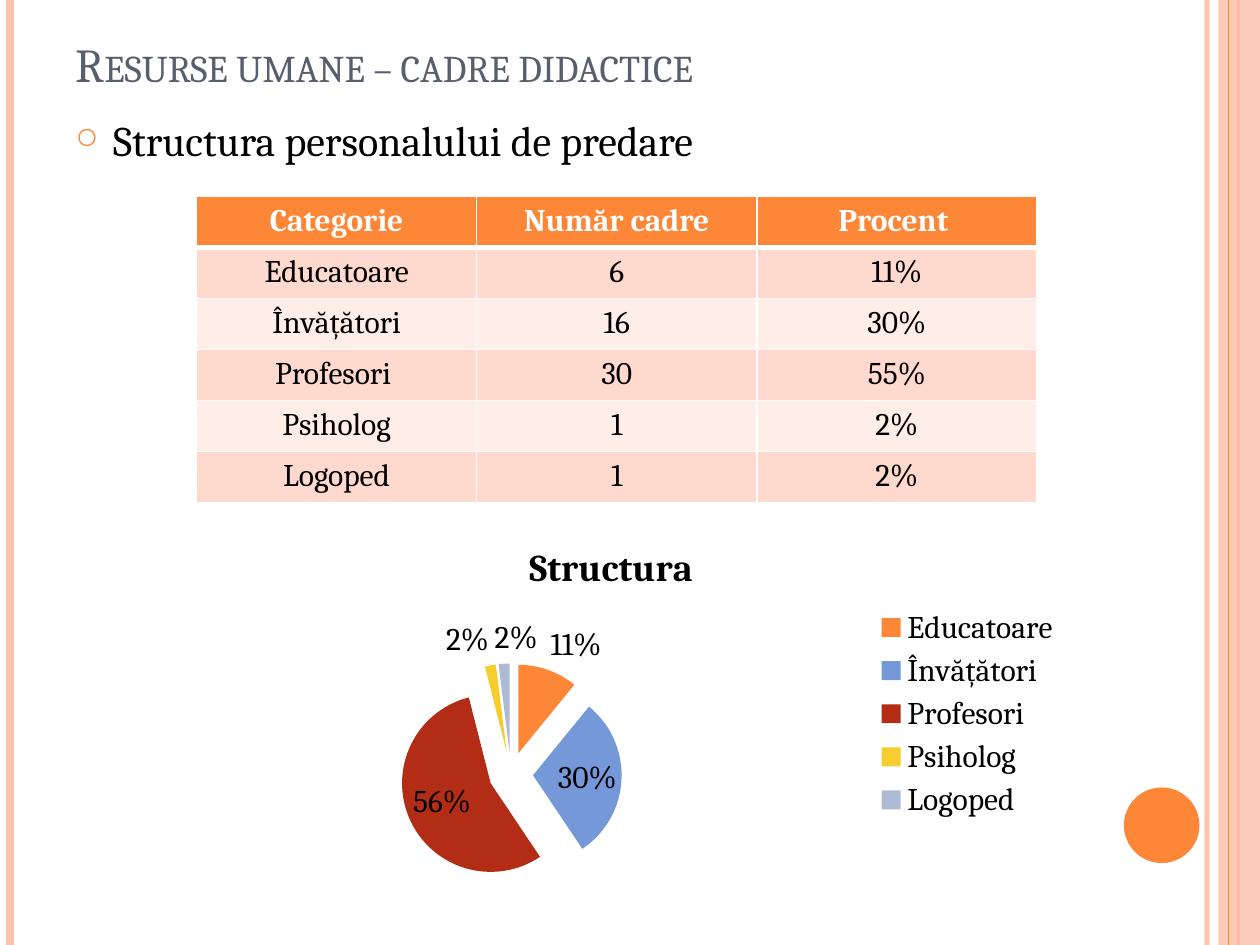
from lxml import etree
from pptx import Presentation
from pptx.chart.data import CategoryChartData
from pptx.dml.color import RGBColor
from pptx.enum import chart as charts, shapes, text
from pptx.oxml.ns import qn
from pptx.util import Inches, Pt

FONT = "Cambria"
ORANGE, PEACH, WHITE, BLACK = "FE8637", "FEC3AE", "FFFFFF", "000000"
BANDS = ("FFD9CE", "FFEDE8")
SLICES = (ORANGE, "7598D9", "B32C16", "F5CD2D", "AEBAD5")
HEADER = ("Categorie", "Număr cadre", "Procent ")
STAFF = (
    ("Educatoare", "6", "11%"),
    ("Învățători", "16", "30%"),
    ("Profesori ", "30", "55%"),
    ("Psiholog", "1", "2%"),
    ("Logoped", "1", "2%"),
)
SHARES = (11, 30, 56, 2, 2)


def color(value):
    return RGBColor.from_string(value)


def add_xml(parent, tag, **attributes):
    return etree.SubElement(parent, qn(tag), attributes)


def set_alpha(properties, percent):
    """Make the solid colours below an element partly transparent."""
    for item in properties.iter(qn("a:srgbClr")):
        add_xml(item, "a:alpha", val=str(percent * 1000))


def format_font(font, size, fill=BLACK, bold=False):
    font.name, font.size, font.bold = FONT, Pt(size), bold
    font.color.rgb = color(fill)


def write_text(frame, content, size, fill=BLACK, bold=False, align=None, small_caps=False):
    paragraph = frame.paragraphs[0]
    paragraph.alignment = align
    run = paragraph.add_run()
    run.text = content
    format_font(run.font, size, fill, bold)
    if small_caps:
        run._r.get_or_add_rPr().set("cap", "small")
    return paragraph


def add_text_box(slide, left, top, width, height, content, size,
                 anchor=text.MSO_ANCHOR.TOP, **style):
    box = slide.shapes.add_textbox(Inches(left), Inches(top), Inches(width), Inches(height))
    box.text_frame.word_wrap = True
    box.text_frame.vertical_anchor = anchor
    return write_text(box.text_frame, content, size, **style)


def add_shape(slide, kind, left, top, width, height, fill, alpha=100):
    shape = slide.shapes.add_shape(kind, Inches(left), Inches(top), Inches(width), Inches(height))
    shape.shadow.inherit = False
    shape.fill.solid()
    shape.fill.fore_color.rgb = color(fill)
    shape.line.fill.background()
    if alpha < 100:
        set_alpha(shape._element.spPr, alpha)


def add_vertical_line(slide, x, height, fill, width, alpha=100):
    line = slide.shapes.add_connector(
        shapes.MSO_CONNECTOR.STRAIGHT, Inches(x), 0, Inches(x), Inches(height))
    line.line.color.rgb = color(fill)
    line.line.width = Pt(width)
    properties = line._element.spPr
    if alpha < 100:
        set_alpha(properties, alpha)
    add_xml(properties, "a:effectLst")


def add_decoration(slide, width, height):
    """Draw the stripes along both edges and the disc at the lower right."""
    add_vertical_line(slide, width - 0.42, height, PEACH, 3, alpha=93)
    add_vertical_line(slide, 0.08, height, PEACH, 4.5)
    add_vertical_line(slide, width - 0.17, height, ORANGE, 1.5)
    add_shape(slide, shapes.MSO_SHAPE.RECTANGLE, width - 0.33, 0, 0.33, height, PEACH, alpha=87)
    add_vertical_line(slide, width - 0.25, height, ORANGE, 0.75)
    add_shape(slide, shapes.MSO_SHAPE.OVAL, width - 1.08, height - 1.25, 0.6, 0.6, ORANGE)


def add_bullet_text(slide, left, top, width, height, content):
    paragraph = add_text_box(slide, left, top, width, height, content, 24)
    paragraph.space_before = Pt(6)
    properties = paragraph._p.get_or_add_pPr()
    properties.set("marL", str(Inches(0.3)))
    properties.set("indent", str(-Inches(0.3)))
    add_xml(add_xml(properties, "a:buClr"), "a:srgbClr", val=ORANGE)
    add_xml(properties, "a:buSzPct", val="70000")
    add_xml(properties, "a:buChar", char="○")


def format_cell(cell, fill, top, bottom):
    """Set white borders, with top and bottom widths in points, and the fill."""
    properties = cell._tc.get_or_add_tcPr()
    for side, width in (("L", 1), ("R", 1), ("T", top), ("B", bottom)):
        border = add_xml(properties, f"a:ln{side}", w=str(Pt(width)))
        add_xml(add_xml(border, "a:solidFill"), "a:srgbClr", val=WHITE)
    cell.fill.solid()
    cell.fill.fore_color.rgb = color(fill)


def add_staff_table(slide, left, top, width, height):
    rows = (HEADER,) + STAFF
    table = slide.shapes.add_table(
        len(rows), len(HEADER), Inches(left), Inches(top), Inches(width), Inches(height)).table
    for row_index, row in enumerate(rows):
        is_header = row_index == 0
        fill = ORANGE if is_header else BANDS[(row_index - 1) % 2]
        for column_index, content in enumerate(row):
            cell = table.cell(row_index, column_index)
            format_cell(cell, fill, top=3 if row_index == 1 else 1, bottom=3 if is_header else 1)
            write_text(cell.text_frame, content, 18, fill=WHITE if is_header else BLACK,
                       bold=is_header, align=text.PP_ALIGN.CENTER)


def add_structure_chart(slide, left, top, width, height):
    data = CategoryChartData()
    data.categories = [row[0].strip() for row in STAFF]
    data.add_series("Structura ", SHARES)
    chart = slide.shapes.add_chart(
        charts.XL_CHART_TYPE.PIE, Inches(left), Inches(top), Inches(width), Inches(height),
        data).chart
    format_font(chart.font, 18)
    chart.has_title = True
    write_text(chart.chart_title.text_frame, "Structura ", 21.6, bold=True)
    chart.has_legend = True
    chart.legend.position = charts.XL_LEGEND_POSITION.RIGHT
    chart.legend.include_in_layout = False

    plot = chart.plots[0]
    plot.vary_by_categories = True
    plot.has_data_labels = True
    labels = plot.data_labels
    labels.show_value = True
    labels.show_percentage = False
    labels.number_format = '0"%"'
    labels.number_format_is_linked = False
    labels.position = charts.XL_LABEL_POSITION.BEST_FIT
    format_font(labels.font, 18)

    series = plot.series[0]
    for index, fill in enumerate(SLICES):
        point_fill = series.points[index].format.fill
        point_fill.solid()
        point_fill.fore_color.rgb = color(fill)
    explosion = etree.Element(qn("c:explosion"), val="25")
    series._element.find(qn("c:dPt")).addprevious(explosion)


def main():
    presentation = Presentation()
    presentation.slide_width, presentation.slide_height = Inches(10), Inches(7.5)
    slide = presentation.slides.add_slide(presentation.slide_layouts[6])
    add_decoration(slide, 10, 7.5)
    add_text_box(slide, 0.5, 0.3, 8.72, 0.48, "Resurse umane – cadre didactice", 27,
                 anchor=text.MSO_ANCHOR.BOTTOM, fill="575F6D", small_caps=True)
    add_bullet_text(slide, 0.5, 0.86, 8.88, 6.25, "Structura personalului de predare")
    add_staff_table(slide, 1.56, 1.56, 6.67, 2.43)
    add_structure_chart(slide, 1.25, 4.14, 7.27, 3.05)
    presentation.save("out.pptx")


if __name__ == "__main__":
    main()
